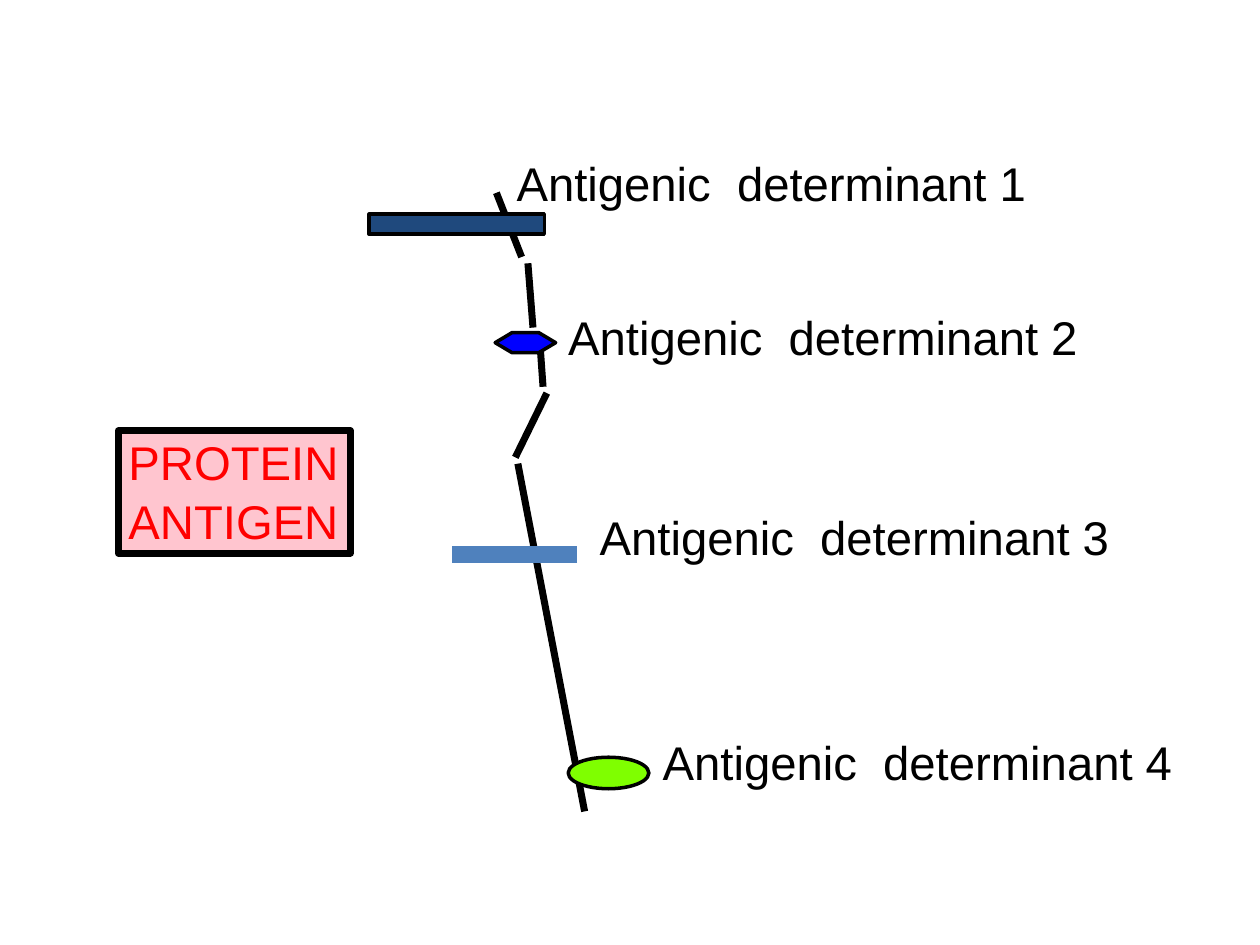
from typing import NamedTuple, Optional

from lxml import etree
from pptx import Presentation
from pptx.dml.color import RGBColor
from pptx.enum.shapes import MSO_CONNECTOR, MSO_SHAPE
from pptx.enum.text import MSO_ANCHOR, PP_ALIGN
from pptx.oxml.ns import qn
from pptx.util import Inches, Pt

STRAIGHT = MSO_CONNECTOR.STRAIGHT
ELLIPSE, RECTANGLE, HEXAGON = MSO_SHAPE.OVAL, MSO_SHAPE.RECTANGLE, MSO_SHAPE.HEXAGON
BOTTOM, LEFT = MSO_ANCHOR.BOTTOM, PP_ALIGN.LEFT

BLACK = RGBColor(0x00, 0x00, 0x00)
RED = RGBColor(0xFF, 0x00, 0x00)
PINK = RGBColor(0xFF, 0xC5, 0xCF)
NAVY = RGBColor(0x1F, 0x49, 0x7D)
BLUE = RGBColor(0x00, 0x00, 0xFF)
STEEL = RGBColor(0x4F, 0x81, 0xBD)
LIME = RGBColor(0x7F, 0xFF, 0x00)


class Segment(NamedTuple):
    start: tuple[float, float]
    end: tuple[float, float]
    color: RGBColor = BLACK
    weight: float = 4


class Block(NamedTuple):
    kind: int
    left: float
    top: float
    width: float
    height: float
    fill: RGBColor
    weight: float = 2
    adjustment: Optional[float] = None


CHAIN = [
    Segment((3.94, 1.53), (4.14, 2.04)),
    Segment((4.19, 2.09), (4.23, 2.6)),
    Segment((4.28, 2.65), (4.31, 3.07)),
    Segment((4.34, 3.12), (4.09, 3.63)),
    Segment((4.11, 3.68), (4.64, 6.44)),
]
DETERMINANT_1 = Block(RECTANGLE, 2.93, 1.7, 1.39, 0.16, NAVY)
DETERMINANT_2 = Block(HEXAGON, 3.93, 2.64, 0.48, 0.16, BLUE, adjustment=0.838)
DETERMINANT_3 = Segment((4.58, 4.4), (3.59, 4.4), STEEL, 10)
DETERMINANT_4 = Block(ELLIPSE, 4.51, 6.01, 0.64, 0.25, LIME)
PROTEIN = Block(RECTANGLE, 0.94, 3.42, 1.84, 0.97, PINK, 4)
LABEL_POSITIONS = [(4.02, 1.25), (4.43, 2.47), (4.68, 4.06), (5.18, 5.84)]


def draw_segment(slide, segment: Segment):
    line = slide.shapes.add_connector(
        STRAIGHT, *(Inches(v) for v in segment.start + segment.end))
    line.line.color.rgb = segment.color
    line.line.width = Pt(segment.weight)
    etree.SubElement(line._element.spPr, qn("a:effectLst"))


def draw_block(slide, block: Block):
    shape = slide.shapes.add_shape(block.kind, *(Inches(v) for v in block[1:5]))
    shape.shadow.inherit = False
    shape.fill.solid()
    shape.fill.fore_color.rgb = block.fill
    shape.line.color.rgb = BLACK
    shape.line.width = Pt(block.weight)
    if block.adjustment is not None:
        shape.adjustments[0] = block.adjustment
    return shape


def write(shape, text: str, *, color: RGBColor = BLACK,
          line_spacing: Optional[float] = None, gap: float = 0):
    frame = shape.text_frame
    frame.word_wrap = False
    frame.vertical_anchor = BOTTOM
    frame.margin_left = frame.margin_right = Inches(0.08)
    frame.margin_top = frame.margin_bottom = Inches(0.03)
    frame.text = text
    for index, paragraph in enumerate(frame.paragraphs):
        paragraph.alignment = LEFT
        paragraph.line_spacing = line_spacing
        if index:
            paragraph.space_before = Pt(gap)
        paragraph.font.name = "Arial"
        paragraph.font.size = Pt(27)
        paragraph.font.color.rgb = color


def main():
    """Draw a protein antigen chain with its four antigenic determinants."""
    presentation = Presentation()
    presentation.slide_width, presentation.slide_height = Inches(10), Inches(7.5)
    slide = presentation.slides.add_slide(presentation.slide_layouts[6])

    for segment in CHAIN:
        draw_segment(slide, segment)
    draw_block(slide, DETERMINANT_4)
    draw_segment(slide, DETERMINANT_3)
    draw_block(slide, DETERMINANT_1)
    for number, (left, top) in enumerate(LABEL_POSITIONS, start=1):
        label = slide.shapes.add_textbox(
            Inches(left), Inches(top), Inches(4.24), Inches(0.46))
        write(label, f"Antigenic  determinant {number}", line_spacing=0.87)
    write(draw_block(slide, PROTEIN), "PROTEIN\nANTIGEN", color=RED, gap=1.5)
    draw_block(slide, DETERMINANT_2)

    presentation.save("out.pptx")


if __name__ == "__main__":
    main()
